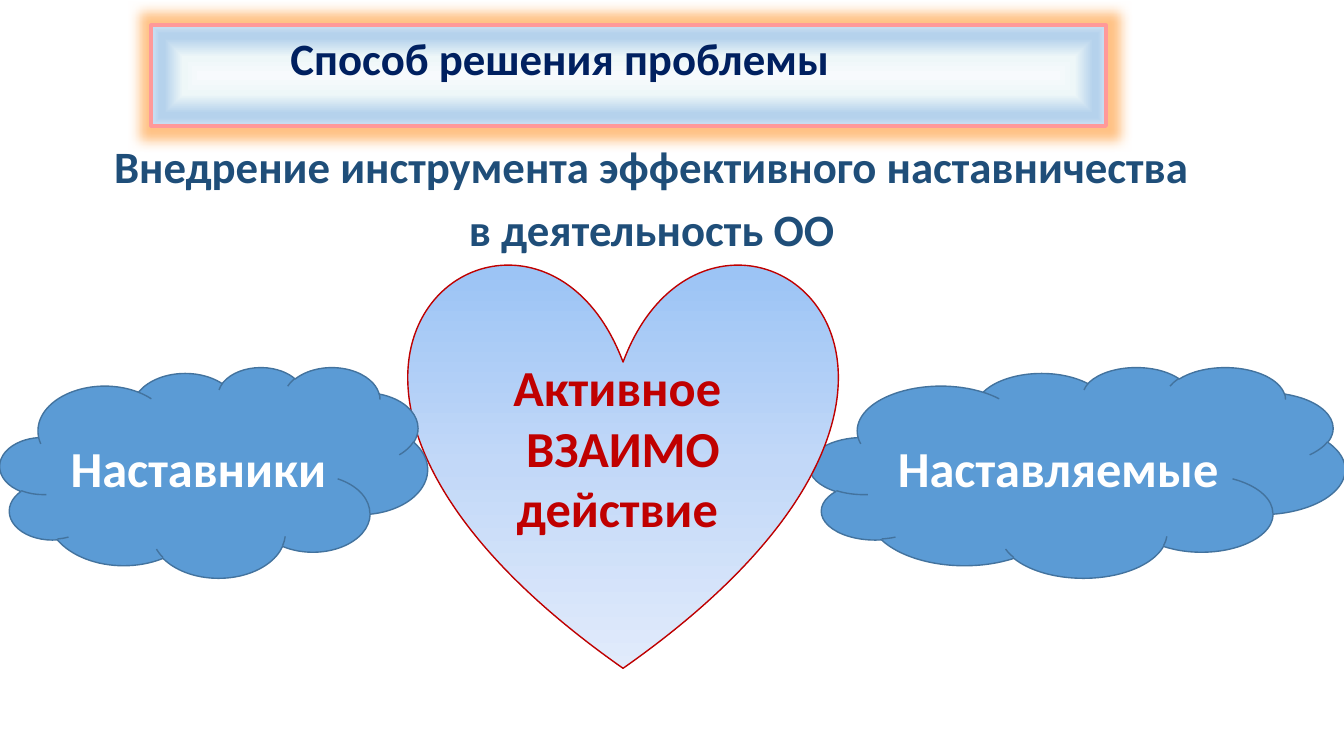
from typing import NamedTuple

from lxml import etree
from pptx import Presentation
from pptx.dml.color import RGBColor
from pptx.enum.shapes import MSO_SHAPE
from pptx.enum.text import MSO_ANCHOR, MSO_AUTO_SIZE, PP_ALIGN
from pptx.oxml.ns import qn
from pptx.util import Inches, Pt

CLOUD, HEART = MSO_SHAPE.CLOUD, MSO_SHAPE.HEART
LEFT, CENTER = PP_ALIGN.LEFT, PP_ALIGN.CENTER
TOP, MIDDLE = MSO_ANCHOR.TOP, MSO_ANCHOR.MIDDLE
NO_FIT = MSO_AUTO_SIZE.NONE
FONT = "Calibri"
TITLE_ONLY = 5

Stops = list[tuple[int, str]]


class Figure(NamedTuple):
    kind: int
    box: tuple[float, float, float, float]
    fill: str | Stops
    line: str
    text: str
    color: str


HEART_STOPS = [(0, "9AC3F5"), (50, "C2D8F8"), (100, "E1EBFB")]
TITLE_STOPS = [(0, "F7FAFD"), (37, "EEF7F8"), (74, "B5D2EC"),
               (83, "B5D2EC"), (100, "CEE1F2")]
FIGURES = [
    Figure(CLOUD, (8.03, 3.64, 5.31, 2.09), "5B9BD5", "43739E",
           "Наставляемые ", "FFFFFF"),
    Figure(HEART, (4.06, 2.58, 4.24, 4.05), HEART_STOPS, "C00000",
           "Активное \nВЗАИМО\nдействие ", "C00000"),
    Figure(CLOUD, (0, 3.64, 4.24, 2.09), "5B9BD5", "43739E",
           "Наставники ", "FFFFFF"),
]


def rgb(code: str) -> RGBColor:
    return RGBColor.from_string(code)


def add(parent, tag: str, **attrs):
    return etree.SubElement(parent, qn(tag), {k: str(v) for k, v in attrs.items()})


def write(shape, text: str, *, size: float, color: str, align=CENTER,
          anchor=MIDDLE, spacing: float = 1, gap: float = 0) -> None:
    """Fill the shape with bold text, one paragraph a line, gap points apart."""
    frame = shape.text_frame
    frame.text = text
    frame.word_wrap = True
    frame.auto_size = NO_FIT
    frame.vertical_anchor = anchor
    for i, para in enumerate(frame.paragraphs):
        para.alignment = align
        para.line_spacing = spacing
        para.space_before = Pt(gap if i else 0)
        for run in para.runs:
            font = run.font
            font.name, font.size, font.bold = FONT, Pt(size), True
            font.color.rgb = rgb(color)


def shade(shape, stops: Stops, *, nested: bool = False) -> None:
    """Apply a downward gradient, or one that spreads from the centre."""
    shape.fill.gradient()
    grad = shape.element.spPr.find(qn("a:gradFill"))
    for child in list(grad):
        grad.remove(child)
    row = add(grad, "a:gsLst")
    for pos, code in stops:
        add(add(row, "a:gs", pos=pos * 1000), "a:srgbClr", val=code)
    if nested:
        way = add(grad, "a:path", path="shape")
        add(way, "a:fillToRect", l=50000, t=50000, r=50000, b=50000)
    else:
        add(grad, "a:lin", ang=5400000, scaled=0)


def outline(shape, color: str, width: float) -> None:
    shape.line.color.rgb = rgb(color)
    shape.line.width = Pt(width)


def glow(shape, color: str, radius: float, alpha: int) -> None:
    effects = add(shape.element.spPr, "a:effectLst")
    halo = add(effects, "a:glow", rad=Pt(radius))
    add(add(halo, "a:srgbClr", val=color), "a:alpha", val=alpha * 1000)


def draw(slide, fig: Figure) -> None:
    shape = slide.shapes.add_shape(fig.kind, *map(Inches, fig.box))
    shape.shadow.inherit = False
    if isinstance(fig.fill, str):
        shape.fill.solid()
        shape.fill.fore_color.rgb = rgb(fig.fill)
    else:
        shade(shape, fig.fill)
    outline(shape, fig.line, 1)
    write(shape, fig.text, size=36, color=fig.color)


def head(slide) -> None:
    title = slide.shapes.title
    title.left, title.top = Inches(1.5), Inches(0.25)
    title.width, title.height = Inches(9.47), Inches(1)
    shade(title, TITLE_STOPS, nested=True)
    outline(title, "FF9999", 2.5)
    glow(title, "FF9933", 18, 60)
    write(title, "Способ решения проблемы", size=32, color="002060",
          align=LEFT, anchor=TOP)
    title.text_frame.margin_left = Inches(1.38)


def main() -> None:
    deck = Presentation()
    deck.slide_width, deck.slide_height = Inches(13.33), Inches(7.5)
    slide = deck.slides.add_slide(deck.slide_layouts[TITLE_ONLY])
    head(slide)
    goal = slide.shapes.add_textbox(*map(Inches, (0, 1.39, 13.03, 0.65)))
    write(goal, "Внедрение инструмента эффективного наставничества \n"
          "в деятельность ОО ", size=32, color="1F4E79", anchor=TOP,
          spacing=0.9, gap=10)
    for fig in FIGURES:
        draw(slide, fig)
    deck.save("out.pptx")


if __name__ == "__main__":
    main()
